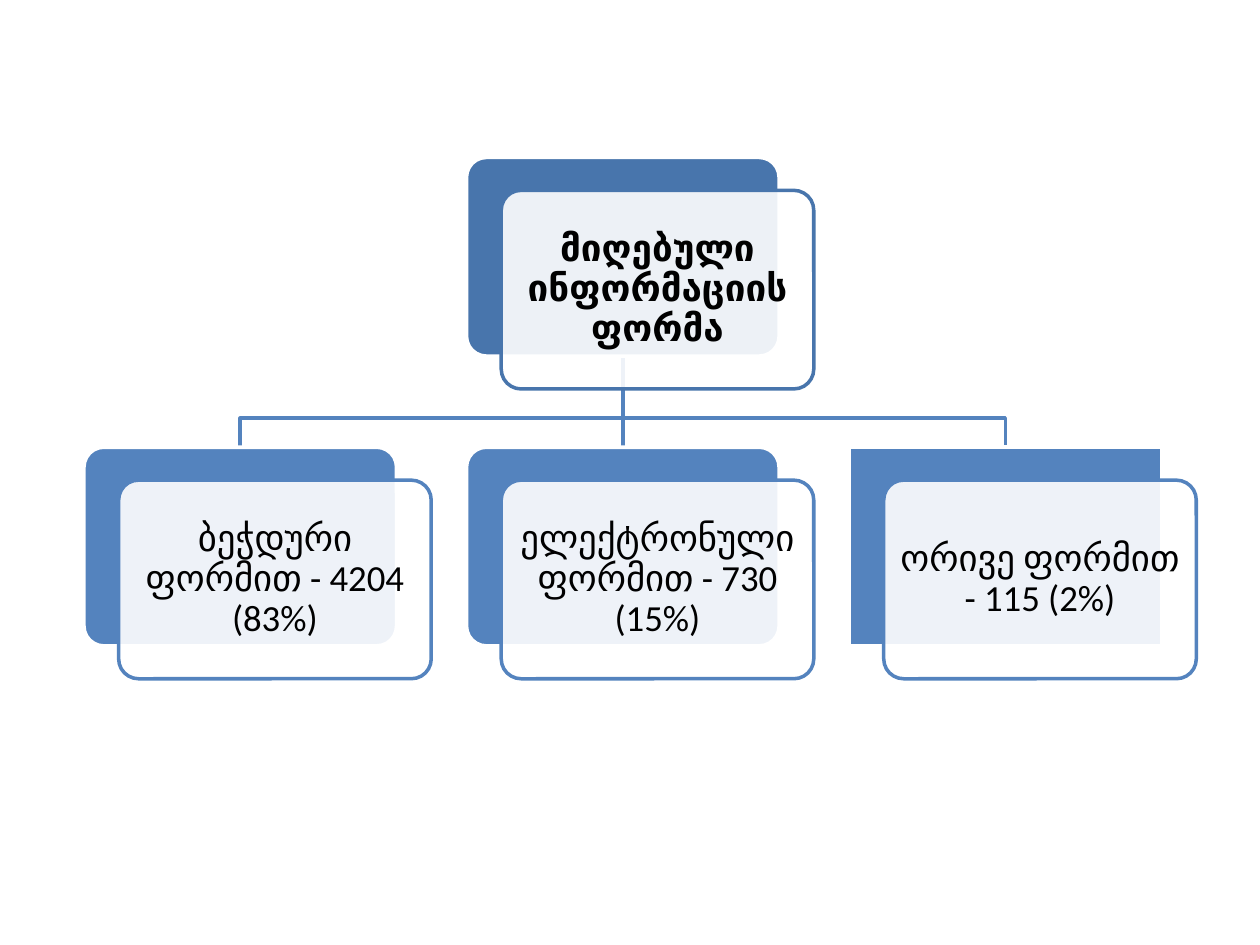
from dataclasses import dataclass

from lxml import etree
from pptx import Presentation
from pptx.dml.color import RGBColor
from pptx.enum import shapes, text
from pptx.oxml import ns
from pptx.util import Pt


@dataclass(frozen=True)
class Theme:
    root: RGBColor = RGBColor.from_string("4875AC")
    branch: RGBColor = RGBColor.from_string("5483BE")
    paper: RGBColor = RGBColor.from_string("FFFFFF")
    ink: RGBColor = RGBColor.from_string("000000")
    font: str = "Calibri"
    text_size: float = 21
    line_width: float = 2
    corner: float = 0.1
    card_opacity: int = 90


WIDTH, HEIGHT = 178.6, 113.5
LEFT, PITCH = 48, 218.6
ROOT_TOP, BRANCH_TOP, BUS = 90, 255.6, 239
CARD_SHIFT_X, CARD_SHIFT_Y = 19.8, 18.8
ROUNDED = shapes.MSO_SHAPE.ROUNDED_RECTANGLE
PROCESS = shapes.MSO_SHAPE.FLOWCHART_PROCESS

ROOT_LABEL = "მიღებული ინფორმაციის ფორმა"
BRANCHES = [
    ("ბეჭდური ფორმით - 4204 (83%)", ROUNDED),
    ("ელექტრონული ფორმით - 730 (15%)", ROUNDED),
    ("ორივე ფორმით - 115 (2%)", PROCESS),
]


def apply(target, values):
    for name, value in values.items():
        setattr(target, name, value)


class Chart:
    def __init__(self, slide, theme):
        self.slide, self.theme = slide, theme

    def outline(self, shape, colour):
        shape.line.color.rgb = colour
        shape.line.width = Pt(self.theme.line_width)

    def box(self, kind, left, top, fill, line):
        shape = self.slide.shapes.add_shape(kind, Pt(left), Pt(top), Pt(WIDTH), Pt(HEIGHT))
        shape.shadow.inherit = False
        if kind == ROUNDED:
            shape.adjustments[0] = self.theme.corner
        shape.fill.solid()
        shape.fill.fore_color.rgb = fill
        self.outline(shape, line)
        return shape

    def label(self, shape, words, bold):
        # The rounded corners already push the text inwards by about 3 points.
        margins = {f"margin_{side}": Pt(3.2) for side in ("left", "right", "top", "bottom")}
        apply(shape.text_frame, {
            **margins, "word_wrap": True, "vertical_anchor": text.MSO_ANCHOR.MIDDLE})
        paragraph = shape.text_frame.paragraphs[0]
        apply(paragraph, {"alignment": text.PP_ALIGN.CENTER, "line_spacing": 0.9})
        run = paragraph.add_run()
        run.text = words
        apply(run.font, {
            "name": self.theme.font, "size": Pt(self.theme.text_size), "bold": bold})
        run.font.color.rgb = self.theme.ink

    def node(self, words, left, top, colour, kind=ROUNDED, bold=False):
        """Draw a coloured back plate with a translucent labelled card over it."""
        self.box(kind, left, top, colour, self.theme.paper)
        card = self.box(ROUNDED, left + CARD_SHIFT_X, top + CARD_SHIFT_Y,
                        self.theme.paper, colour)
        fill_colour = card.fill._xPr.find(ns.qn("a:solidFill"))[0]
        etree.SubElement(fill_colour, ns.qn("a:alpha"),
                         val=str(self.theme.card_opacity * 1000))
        self.label(card, words, bold)

    def elbow(self, start_x, end_x):
        """Join the root's lower edge to a branch by way of the shared bus."""
        builder = self.slide.shapes.build_freeform(Pt(start_x), Pt(ROOT_TOP + HEIGHT))
        corners = [(start_x, BUS), (end_x, BUS), (end_x, BRANCH_TOP)]
        builder.add_line_segments([(Pt(x), Pt(y)) for x, y in corners], close=False)
        shape = builder.convert_to_shape()
        shape.shadow.inherit = False
        shape.fill.background()
        self.outline(shape, self.theme.branch)

    def straight(self, x):
        line = self.slide.shapes.add_connector(
            shapes.MSO_CONNECTOR.STRAIGHT,
            Pt(x), Pt(ROOT_TOP + HEIGHT), Pt(x), Pt(BRANCH_TOP))
        self.outline(line, self.theme.branch)
        etree.SubElement(line._element.spPr, ns.qn("a:effectLst"))


def main():
    presentation = Presentation()
    apply(presentation, {"slide_width": Pt(720), "slide_height": Pt(540)})
    slide = presentation.slides.add_slide(presentation.slide_layouts[6])
    theme = Theme()
    chart = Chart(slide, theme)

    lefts = [LEFT + PITCH * column for column in range(len(BRANCHES))]
    first, middle, last = [left + WIDTH / 2 for left in lefts]
    chart.elbow(middle, last)
    chart.straight(middle)
    chart.elbow(middle, first)

    chart.node(ROOT_LABEL, lefts[1], ROOT_TOP, theme.root, bold=True)
    for left, (words, kind) in zip(lefts, BRANCHES):
        chart.node(words, left, BRANCH_TOP, theme.branch, kind)
    presentation.save("out.pptx")


if __name__ == "__main__":
    main()
